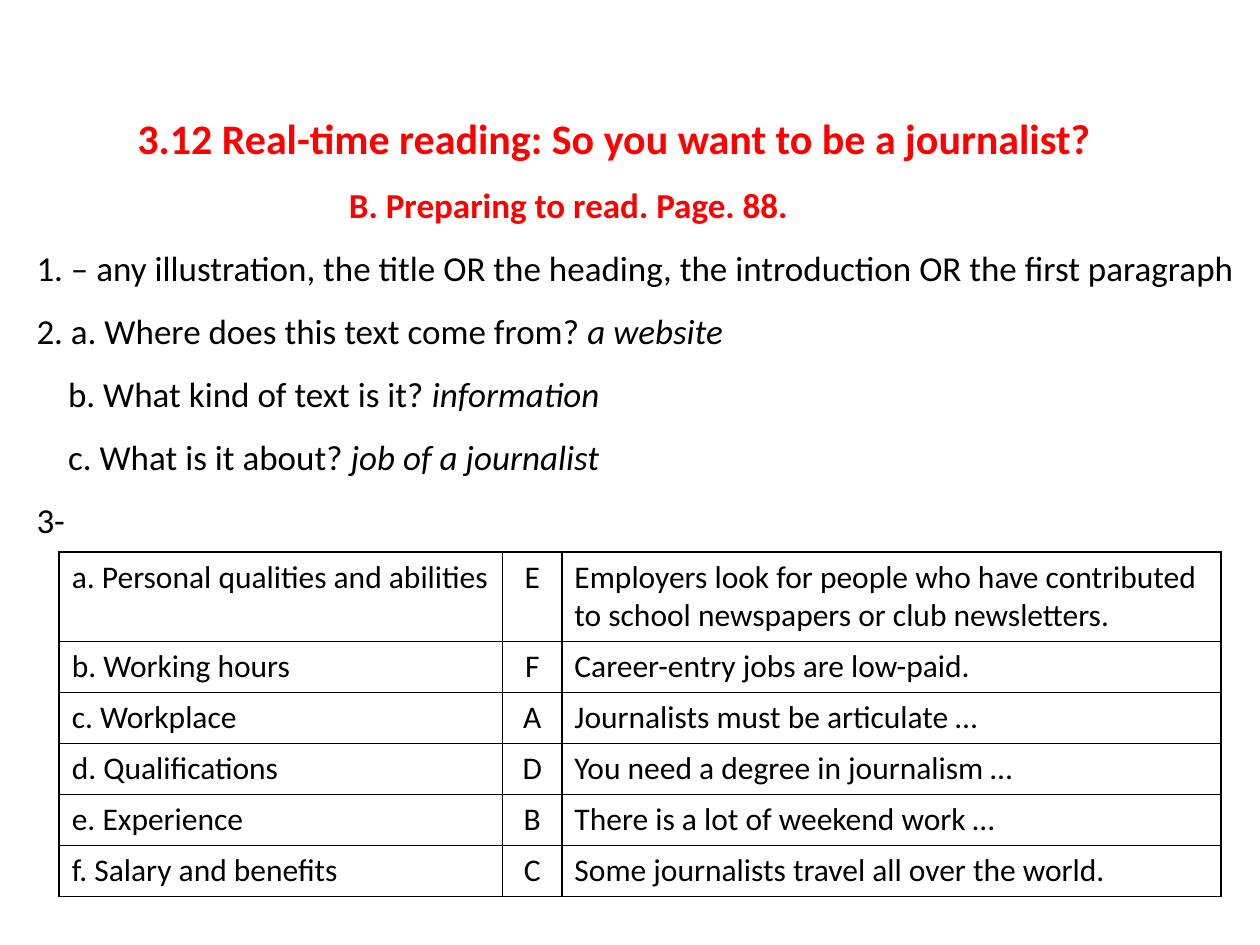
from pptx import Presentation
from pptx.dml.color import RGBColor
from pptx.enum.text import MSO_ANCHOR, PP_ALIGN
from pptx.oxml import parse_xml
from pptx.oxml.ns import nsdecls
from pptx.util import Inches, Pt

LEFT, CENTER = PP_ALIGN.LEFT, PP_ALIGN.CENTER
BOTTOM = MSO_ANCHOR.BOTTOM
RED, BLACK, WHITE = "FF0000", "000000", "FFFFFF"

deck = Presentation()
deck.slide_width, deck.slide_height = Inches(10), Inches(7.5)
COLUMN = deck.slide_width / 100
ROW = deck.slide_height / 75
page = deck.slides.add_slide(deck.slide_layouts[6])


def color(code):
    return RGBColor.from_string(code)


def add_span(para, text, size, ink=BLACK, bold=False, italic=False):
    span = para.add_run()
    span.text = text
    font = span.font
    font.name, font.size, font.bold, font.italic = "Calibri", Pt(size), bold, italic
    font.color.rgb = color(ink)


# Headings and answers: indent in columns, size, ink, bold, text, italic answer
lines = [
    (8, 24, RED, True, "3.12 Real-time reading: So you want to be a journalist?", ""),
    (24.8, 20, RED, True, "B. Preparing to read. Page. 88.", ""),
    (0, 20, BLACK, False, "1. – any illustration, the title OR the heading, "
                          "the introduction OR the first paragraph", ""),
    (0, 20, BLACK, False, "2. a. Where does this text come from? ", "a website"),
    (2.5, 20, BLACK, False, "b. What kind of text is it? ", "information"),
    (2.5, 20, BLACK, False, "c. What is it about? ", "job of a journalist"),
    (0, 20, BLACK, False, "3-", ""),
]
box = page.shapes.add_textbox(
    int(2.9 * COLUMN), int(5 * ROW), int(96 * COLUMN), int(37.9 * ROW))
frame = box.text_frame
frame.word_wrap = True
frame.vertical_anchor = BOTTOM
frame.margin_left = frame.margin_right = frame.margin_top = frame.margin_bottom = 0
for index, (indent, size, ink, bold, text, answer) in enumerate(lines):
    para = frame.add_paragraph() if index else frame.paragraphs[0]
    para.alignment = LEFT
    para.line_spacing = 1.5
    para._p.get_or_add_pPr().set("marL", str(int(indent * COLUMN)))
    add_span(para, text, size, ink, bold)
    if answer:
        add_span(para, answer, size, italic=True)

# Matching table
matches = [
    ("a. Personal qualities and abilities", "E",
     "Employers look for people who have contributed "
     "to school newspapers or club newsletters."),
    ("b. Working hours", "F", "Career-entry jobs are low-paid."),
    ("c. Workplace", "A", "Journalists must be articulate …"),
    ("d. Qualifications", "D", "You need a degree in journalism …"),
    ("e. Experience", "B", "There is a lot of weekend work …"),
    ("f. Salary and benefits", "C", "Some journalists travel all over the world."),
]
widths = (35.2, 4.7, 52.3)
heights = (7.1,) + (4.05,) * 5
alignments = (LEFT, CENTER, LEFT)
table = page.shapes.add_table(
    len(matches), len(widths), int(4.7 * COLUMN), int(43.8 * ROW),
    int(sum(widths) * COLUMN), int(sum(heights) * ROW)).table
table.first_row = table.horz_banding = False
for column, width in zip(table.columns, widths):
    column.width = int(width * COLUMN)
for row, height, match in zip(table.rows, heights, matches):
    row.height = int(height * ROW)
    for cell, text, alignment in zip(row.cells, match, alignments):
        para = cell.text_frame.paragraphs[0]
        para.alignment = alignment
        add_span(para, text, 18)
        properties = cell._tc.get_or_add_tcPr()
        for side in ("lnL", "lnR", "lnT", "lnB"):
            properties.append(parse_xml(
                f'<a:{side} {nsdecls("a")} w="{Pt(1)}"><a:solidFill>'
                f'<a:srgbClr val="{BLACK}"/></a:solidFill></a:{side}>'))
        cell.fill.solid()
        cell.fill.fore_color.rgb = color(WHITE)

deck.save("out.pptx")
